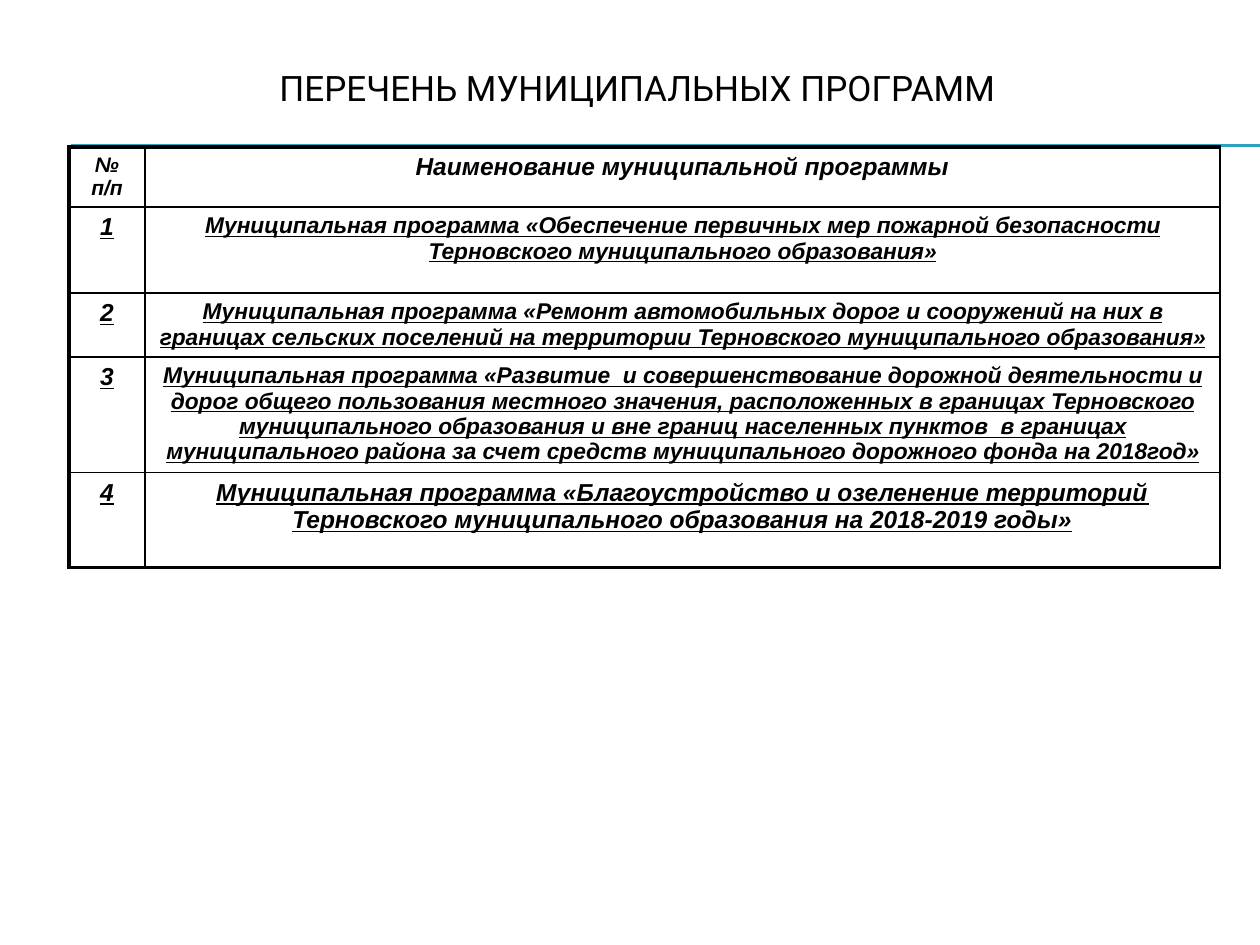
from lxml import etree
from pptx import Presentation
from pptx import util as u
from pptx.dml.color import RGBColor
from pptx.enum import shapes, text
from pptx.oxml import ns

BLACK = RGBColor(0x00, 0x00, 0x00)
TEAL = RGBColor(0x2D, 0xA2, 0xBF)
PX = 914400 // 126
TITLE = "ПЕРЕЧЕНЬ МУНИЦИПАЛЬНЫХ ПРОГРАММ"
HEADER = ("№ п/п", "Наименование муниципальной программы")
# (name, text size, row height)
PROGRAMS = [
    ("Муниципальная программа «Обеспечение первичных мер пожарной безопасности "
     "Терновского муниципального образования»", 13, 86),
    ("Муниципальная программа «Ремонт автомобильных дорог и сооружений на них в границах "
     "сельских поселений на территории Терновского муниципального образования»", 13, 64),
    ("Муниципальная программа «Развитие  и совершенствование дорожной деятельности и дорог "
     "общего пользования местного значения, расположенных в границах Терновского "
     "муниципального образования и вне границ населенных пунктов  в границах муниципального "
     "района за счет средств муниципального дорожного фонда на 2018год»", 13, 114),
    ("Муниципальная программа «Благоустройство и озеленение территорий Терновского "
     "муниципального образования на 2018-2019 годы»", 14, 95),
]
HEADER_HEIGHT = 60
COLUMNS = (76, 1075)
TABLE_LEFT, TABLE_TOP = 69, 147
RULES = (145, 146)
THIN, THICK = 1, 2.25


def px(n):
    return u.Emu(n * PX)


def write(tf, content, size, font="Arial", bold=False, italic=False, underline=False):
    """Put one centred run of text into a frame."""
    tf.word_wrap = True
    p = tf.paragraphs[0]
    p.alignment = text.PP_ALIGN.CENTER
    r = p.add_run()
    r.text = content
    f = r.font
    f.name, f.size, f.color.rgb = font, u.Pt(size), BLACK
    f.bold, f.italic, f.underline = bold, italic, underline


def set_borders(cell, widths):
    """Draw the cell's left, right, top and bottom edges."""
    pr = cell._tc.get_or_add_tcPr()
    for i, (side, width) in enumerate(zip("LRTB", widths)):
        ln = etree.Element(ns.qn(f"a:ln{side}"), w=str(u.Pt(width)))
        fill = etree.SubElement(ln, ns.qn("a:solidFill"))
        etree.SubElement(fill, ns.qn("a:srgbClr"), val=str(BLACK))
        pr.insert(i, ln)


def add_rule(slide, y):
    """Draw a rule from the table's left edge to the slide's edge."""
    line = slide.shapes.add_connector(
        shapes.MSO_CONNECTOR.STRAIGHT, px(71), px(y), px(1260), px(y))
    line.line.color.rgb, line.line.width = TEAL, u.Pt(0.75)
    etree.SubElement(line._element.spPr, ns.qn("a:effectLst"))


def add_programs(slide):
    """Add the table of numbered programs."""
    rows = [(HEADER, (12, 14), HEADER_HEIGHT)]
    rows += [((str(n), name), (14, size), height)
             for n, (name, size, height) in enumerate(PROGRAMS, 1)]
    table = slide.shapes.add_table(
        len(rows), len(COLUMNS), px(TABLE_LEFT), px(TABLE_TOP),
        px(sum(COLUMNS)), px(sum(row[2] for row in rows))).table
    table.first_row = table.horz_banding = False
    for column, width in zip(table.columns, COLUMNS):
        column.width = px(width)
    last = len(rows) - 1
    for i, (words, sizes, height) in enumerate(rows):
        table.rows[i].height = px(height)
        for j, (word, size) in enumerate(zip(words, sizes)):
            cell = table.cell(i, j)
            cell.fill.background()
            cell.margin_bottom = 0
            write(cell.text_frame, word, size, bold=True, italic=True, underline=i > 0)
            set_borders(cell, (THICK if j == 0 else THIN, THIN,
                               THICK if i == 0 else THIN, THICK if i == last else THIN))


def main():
    prs = Presentation()
    prs.slide_width, prs.slide_height = px(1260), px(945)
    slide = prs.slides.add_slide(prs.slide_layouts[6])
    for y in RULES:
        add_rule(slide, y)
    tf = slide.shapes.add_textbox(px(39), px(30), px(1197), px(116)).text_frame
    tf.vertical_anchor = text.MSO_ANCHOR.MIDDLE
    write(tf, TITLE, 20, font="Roboto")
    add_programs(slide)
    prs.save("out.pptx")


if __name__ == "__main__":
    main()
